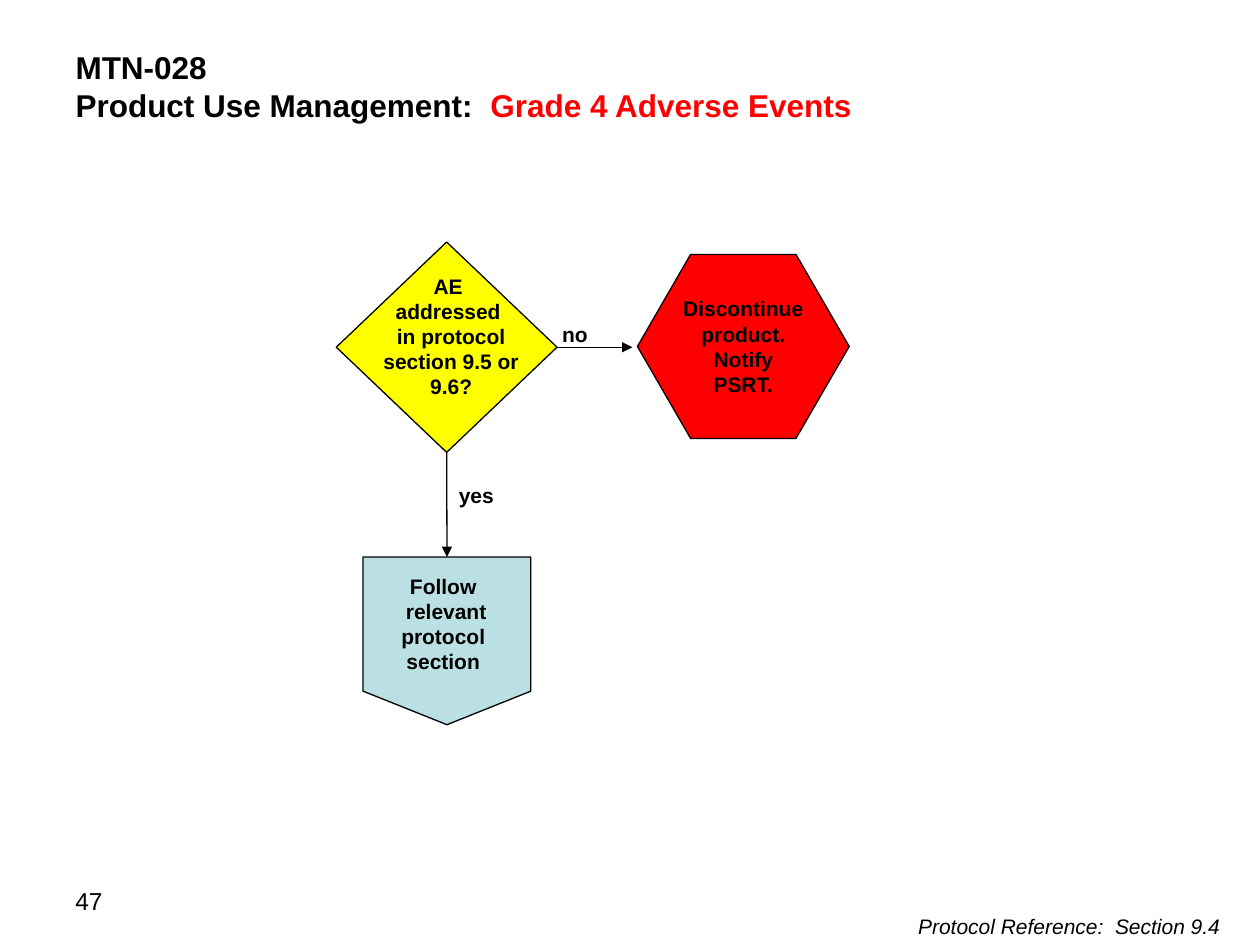
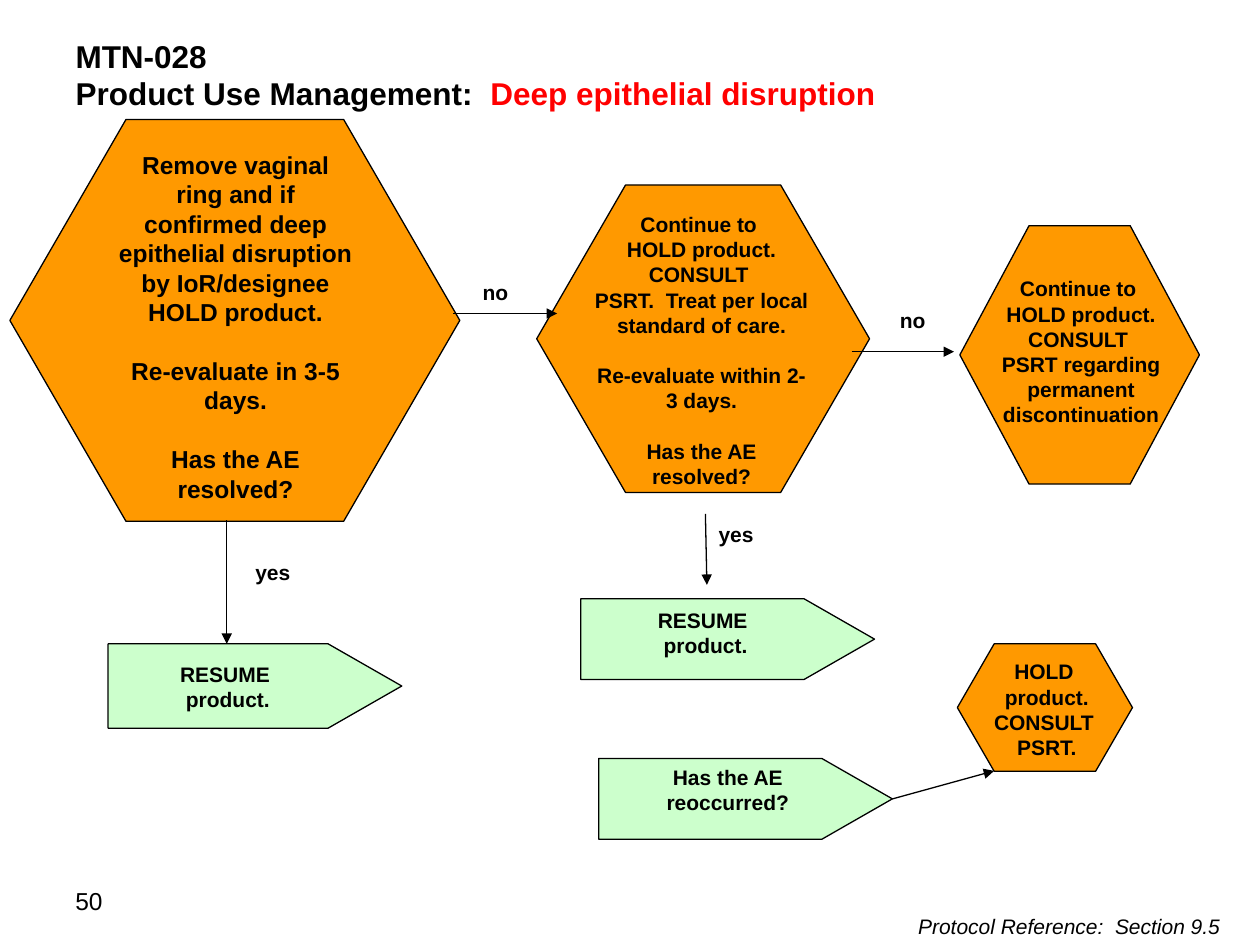
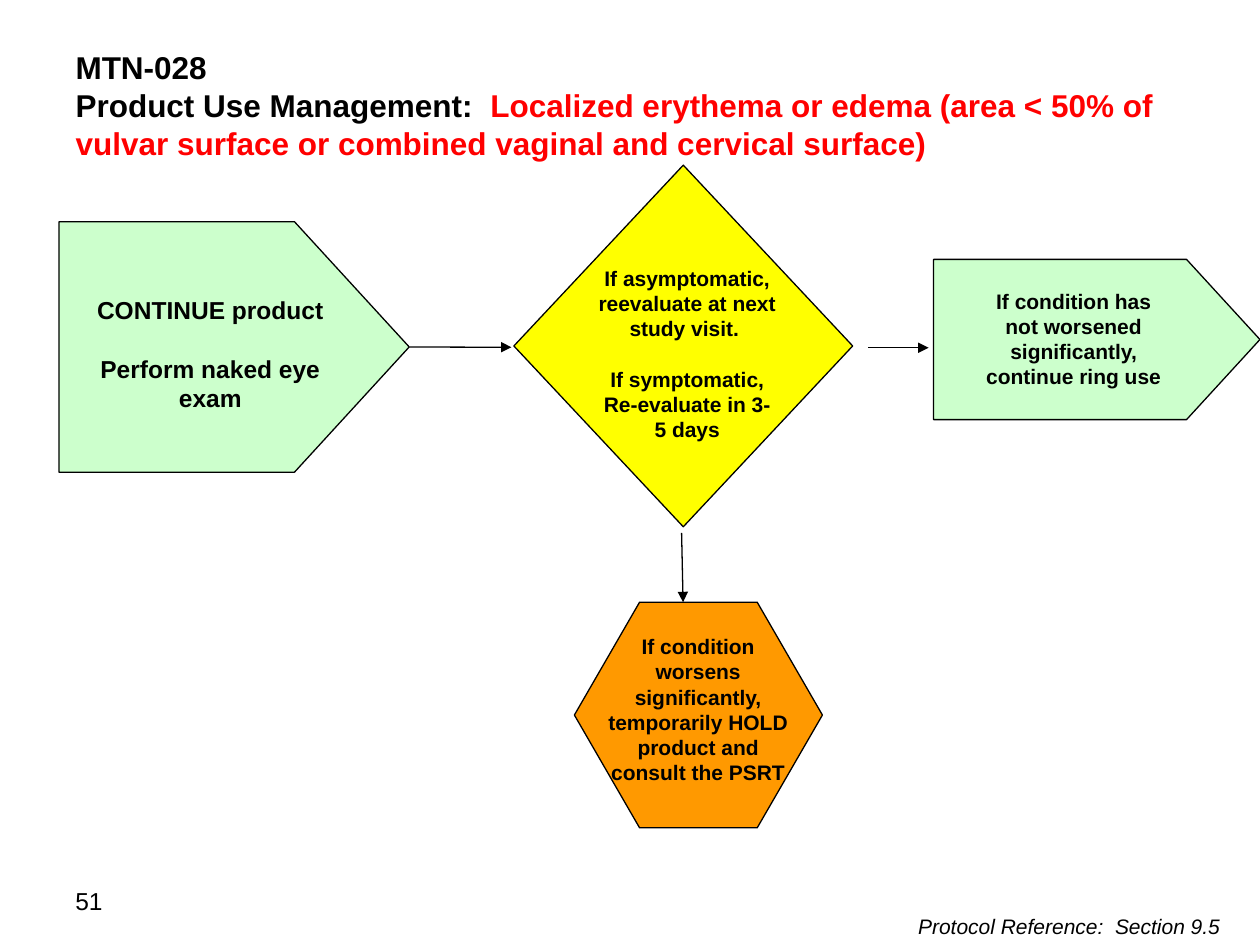
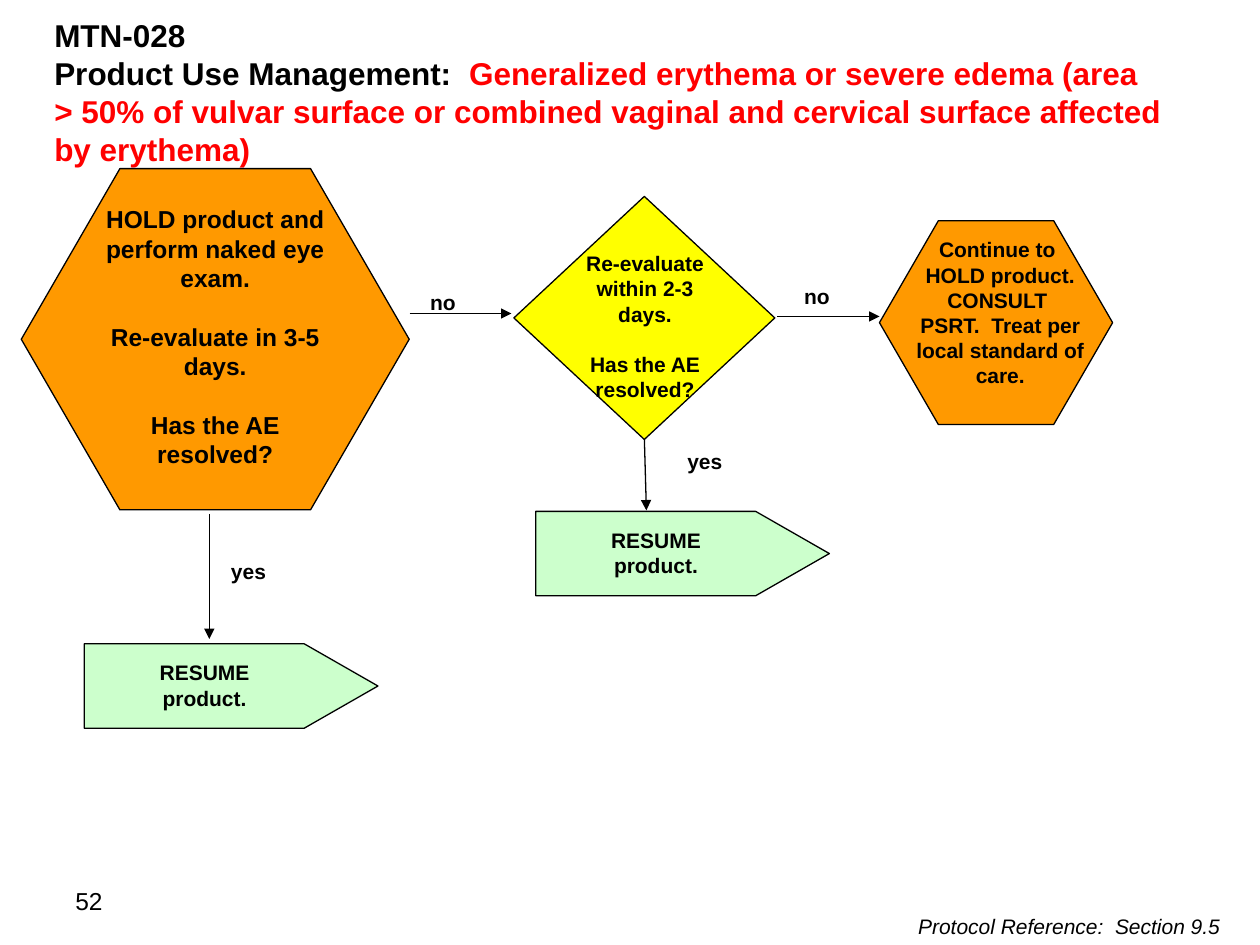
import dataclasses

import pptx
import pptx.dml.color
import pptx.enum.shapes
import pptx.enum.text
import pptx.oxml
import pptx.oxml.ns
import pptx.util

Cm = pptx.util.Cm
Pt = pptx.util.Pt
RGB = pptx.dml.color.RGBColor.from_string
ALIGN = pptx.enum.text.PP_ALIGN
ANCHOR = pptx.enum.text.MSO_ANCHOR
SHAPE = pptx.enum.shapes.MSO_SHAPE
BOTTOM, RIGHT = 2, 3


@dataclasses.dataclass(frozen=True)
class Theme:
    font: str = "Arial"
    ink: str = "000000"
    accent: str = "FF0000"
    decide: str = "FFFF00"
    hold: str = "FF9900"
    stop: str = "FF0000"
    go: str = "CCFFCC"
    refer: str = "BBE0E3"
    title: int = 18
    large: int = 14
    body: int = 12
    line: float = 0.75
    blank_line: float = 1.2
    hexagon: float = 0.289
    short_tip: float = 0.458
    long_tip: float = 0.873


THEME = Theme()


def style(r, size, bold=True, italic=False, color=THEME.ink):
    r.font.name = THEME.font
    r.font.size = Pt(size)
    r.font.bold = bold
    r.font.italic = italic
    r.font.color.rgb = RGB(color)


def write(tf, text, size=THEME.body, align=ALIGN.CENTER, anchor=ANCHOR.TOP, **look):
    tf.word_wrap = True
    tf.vertical_anchor = anchor
    tf.text = text.replace("\n\n", "\n")
    starts = {block.split("\n")[0] for block in text.split("\n\n")[1:]}
    for p in tf.paragraphs:
        p.alignment = align
        if p.text in starts:
            p.space_before = Pt(size * THEME.blank_line)
        for r in p.runs:
            style(r, size, **look)


def add_text(s, at, text, **look):
    tf = s.shapes.add_textbox(*map(Cm, at)).text_frame
    write(tf, text, **look)
    return tf


def add_label(s, x, y, text):
    add_text(s, (x, y, 2.46, 0.76), text)


def add_node(s, kind, at, fill, adjust=None):
    sp = s.shapes.add_shape(kind, *map(Cm, at))
    sp.shadow.inherit = False
    sp.fill.solid()
    sp.fill.fore_color.rgb = RGB(fill)
    sp.line.color.rgb = RGB(THEME.ink)
    sp.line.width = Pt(THEME.line)
    if adjust is not None:
        sp.adjustments[0] = adjust
    return sp


def add_diamond(s, at):
    return add_node(s, SHAPE.DIAMOND, at, THEME.decide)


def add_hexagon(s, at, fill=THEME.hold):
    return add_node(s, SHAPE.HEXAGON, at, fill, THEME.hexagon)


def add_plate(s, at, tip=THEME.long_tip):
    return add_node(s, SHAPE.PENTAGON, at, THEME.go, tip)


def add_arrow(s, start, end):
    c = s.shapes.add_connector(
        pptx.enum.shapes.MSO_CONNECTOR.STRAIGHT, *map(Cm, start + end))
    c.line.color.rgb = RGB(THEME.ink)
    c.line.width = Pt(THEME.line)
    ns = pptx.oxml.ns.nsdecls("a")
    c.line._get_or_add_ln().append(
        pptx.oxml.parse_xml(f'<a:tailEnd {ns} type="triangle"/>'))
    c._element.spPr.append(pptx.oxml.parse_xml(f"<a:effectLst {ns}/>"))
    return c


def add_arrow_from(s, sp, side, end):
    c = add_arrow(s, end, end)
    c.begin_connect(sp, side)
    return c


def add_slide(prs, number, section, topic, title_at):
    s = prs.slides.add_slide(prs.slide_layouts.get_by_name("Title Only"))
    title = s.shapes.title
    title.left, title.top, title.width, title.height = map(Cm, title_at)
    tf = title.text_frame
    tf.auto_size = pptx.enum.text.MSO_AUTO_SIZE.NONE
    write(tf, "MTN-028\nProduct Use Management:  ", size=THEME.title, align=ALIGN.LEFT)
    r = tf.paragraphs[1].add_run()
    r.text = topic
    style(r, THEME.title, color=THEME.accent)
    add_text(s, (1.27, 17.73, 5.92, 1.32), str(number), size=THEME.large,
             align=ALIGN.LEFT, bold=False)
    add_text(s, (15.44, 17.53, 9.53, 1.52), f"Protocol Reference:  Section {section} ",
             align=ALIGN.RIGHT, anchor=ANCHOR.BOTTOM, bold=False, italic=True)
    return s


def build_grade_4(prs):
    s = add_slide(prs, 47, "9.4", "Grade 4 Adverse Events", (1.27, 0.84, 22.86, 1.8))
    addressed = add_diamond(s, (6.78, 4.88, 4.45, 4.24))
    add_text(s, (7.19, 5.38, 3.81, 3.33),
             "AE \naddressed \nin protocol section 9.5 or 9.6?")
    add_hexagon(s, (12.85, 5.13, 4.27, 3.71), THEME.stop)
    add_text(s, (12.8, 5.84, 4.37, 2.31), "Discontinue\nproduct.\nNotify\nPSRT.")
    follow = add_node(s, SHAPE.FLOWCHART_OFFPAGE_CONNECTOR,
                      (7.32, 11.23, 3.38, 3.38), THEME.refer)
    add_text(s, (7.09, 11.43, 3.81, 2.31), "Follow \nrelevant protocol \nsection ")
    add_label(s, 10.36, 6.35, "no")
    yes = add_text(s, (9.25, 9.6, 7.19, 0.76), "yes", align=ALIGN.LEFT)
    yes.margin_left = 0
    add_arrow_from(s, addressed, RIGHT, (12.75, 7))
    add_arrow_from(s, addressed, BOTTOM, (9.01, 11.23)).end_connect(follow, 0)


def build_deep_disruption(prs):
    s = add_slide(prs, 50, "9.5", "Deep epithelial disruption", (1.27, 0.61, 22.86, 1.8))
    add_hexagon(s, (0.2, 2.41, 9.07, 8.1))
    add_text(s, (2.11, 2.9, 5.28, 7.44),
             "Remove vaginal ring and if confirmed deep epithelial disruption "
             "by IoR/designee HOLD product.\n\nRe-evaluate in 3-5 days."
             "\n\nHas the AE resolved?", size=THEME.large)
    add_hexagon(s, (10.82, 3.73, 6.71, 6.2))
    add_text(s, (11.73, 4.14, 4.83, 5.89),
             "Continue to \nHOLD product.\nCONSULT \n"
             "PSRT.  Treat per local standard of care."
             "\n\nRe-evaluate within 2-3 days.\n\nHas the AE resolved?")
    add_hexagon(s, (19.35, 4.55, 4.83, 5.21))
    add_text(s, (19.61, 5.44, 4.37, 3.84),
             "Continue to \nHOLD product.\nCONSULT \n"
             "PSRT regarding permanent discontinuation")
    add_plate(s, (2.18, 12.98, 5.92, 1.7))
    add_text(s, (2.41, 13.21, 4.37, 1.3), "RESUME \nproduct.")
    add_plate(s, (11.71, 12.07, 5.92, 1.63))
    add_text(s, (12.04, 12.12, 4.37, 1.8), "RESUME \nproduct.")
    reoccurred = add_plate(s, (12.07, 15.29, 5.92, 1.63))
    write(reoccurred.text_frame, "Has the AE reoccurred?")
    add_hexagon(s, (19.3, 12.98, 3.53, 2.57))
    add_text(s, (18.92, 13.16, 4.37, 2.31), "HOLD \nproduct.\nCONSULT \nPSRT.")
    add_label(s, 8.76, 5.51, "no")
    add_label(s, 17.17, 6.07, "no")
    add_label(s, 4.27, 11.15, "yes")
    add_label(s, 13.61, 10.39, "yes")
    add_arrow(s, (9.14, 6.32), (11.23, 6.32))
    add_arrow(s, (17.17, 7.09), (19.23, 7.09))
    add_arrow(s, (4.57, 10.49), (4.57, 12.98))
    add_arrow(s, (14.22, 10.36), (14.25, 11.79))
    add_arrow_from(s, reoccurred, RIGHT, (20.04, 15.54))


def build_localized(prs):
    s = add_slide(prs, 51, "9.5",
                  "Localized erythema or edema (area < 50% of vulvar surface "
                  "or combined vaginal and cervical surface)",
                  (1.27, 0.84, 22.86, 2.57))
    exam = add_plate(s, (1.19, 4.47, 7.06, 5.05), THEME.short_tip)
    add_text(s, (1.27, 5.82, 5.94, 3.25),
             "CONTINUE product\n\nPerform naked eye exam", size=THEME.large)
    add_diamond(s, (10.36, 3.33, 6.83, 7.29))
    add_text(s, (11.81, 5.23, 4.09, 3.84),
             "If asymptomatic, reevaluate at next study visit. "
             "\n\nIf symptomatic, Re-evaluate in 3-5 days")
    add_plate(s, (18.82, 5.23, 6.58, 3.23), THEME.short_tip)
    add_text(s, (19.46, 5.69, 4.37, 2.31),
             "If condition has not worsened significantly, continue ring use")
    add_hexagon(s, (11.58, 12.14, 5, 4.55))
    add_text(s, (11.89, 12.65, 4.37, 3.33),
             "If condition worsens significantly, temporarily HOLD product "
             "and consult the PSRT")
    add_arrow_from(s, exam, RIGHT, (10.31, 7))
    add_arrow(s, (17.5, 7.01), (18.72, 7.01))
    add_arrow(s, (13.74, 10.74), (13.77, 12.14))


def build_generalized(prs):
    s = add_slide(prs, 52, "9.5",
                  "Generalized erythema or severe edema (area > 50% of vulvar surface "
                  "or combined vaginal and cervical surface affected by erythema)",
                  (0.84, 0.2, 22.86, 3.33))
    add_hexagon(s, (0.43, 3.4, 7.82, 6.88))
    add_text(s, (1.7, 3.99, 5.28, 5.64),
             "HOLD product and perform naked eye exam."
             "\n\nRe-evaluate in 3-5 days.\n\nHas the AE resolved?", size=THEME.large)
    resolved = add_diamond(s, (10.36, 3.96, 5.26, 4.9))
    add_text(s, (11.43, 4.93, 3.15, 3.33),
             "Re-evaluate within 2-3 days.\n\nHas the AE resolved?")
    add_hexagon(s, (17.73, 4.45, 4.7, 4.11))
    add_text(s, (17.98, 4.65, 4.37, 3.33),
             "Continue to \nHOLD product.\nCONSULT \n"
             "PSRT.  Treat per local standard of care.")
    for x, y in ((1.7, 12.98), (10.8, 10.31)):
        add_plate(s, (x, y, 5.92, 1.7))
        add_text(s, (x + 0.24, y + 0.2, 4.37, 1.3), "RESUME\nproduct.")
    add_label(s, 7.7, 5.72, "no")
    add_label(s, 15.24, 5.59, "no")
    add_label(s, 3.78, 11.13, "yes")
    add_label(s, 12.98, 8.92, "yes")
    add_arrow(s, (8.26, 6.32), (10.31, 6.32))
    add_arrow(s, (15.67, 6.38), (17.73, 6.38))
    add_arrow(s, (4.22, 10.36), (4.22, 12.88))
    add_arrow_from(s, resolved, BOTTOM, (13.03, 10.29))


def main():
    prs = pptx.Presentation()
    prs.slide_width, prs.slide_height = Cm(25.4), Cm(19.05)
    build_grade_4(prs)
    build_deep_disruption(prs)
    build_localized(prs)
    build_generalized(prs)
    prs.save("out.pptx")


if __name__ == "__main__":
    main()
